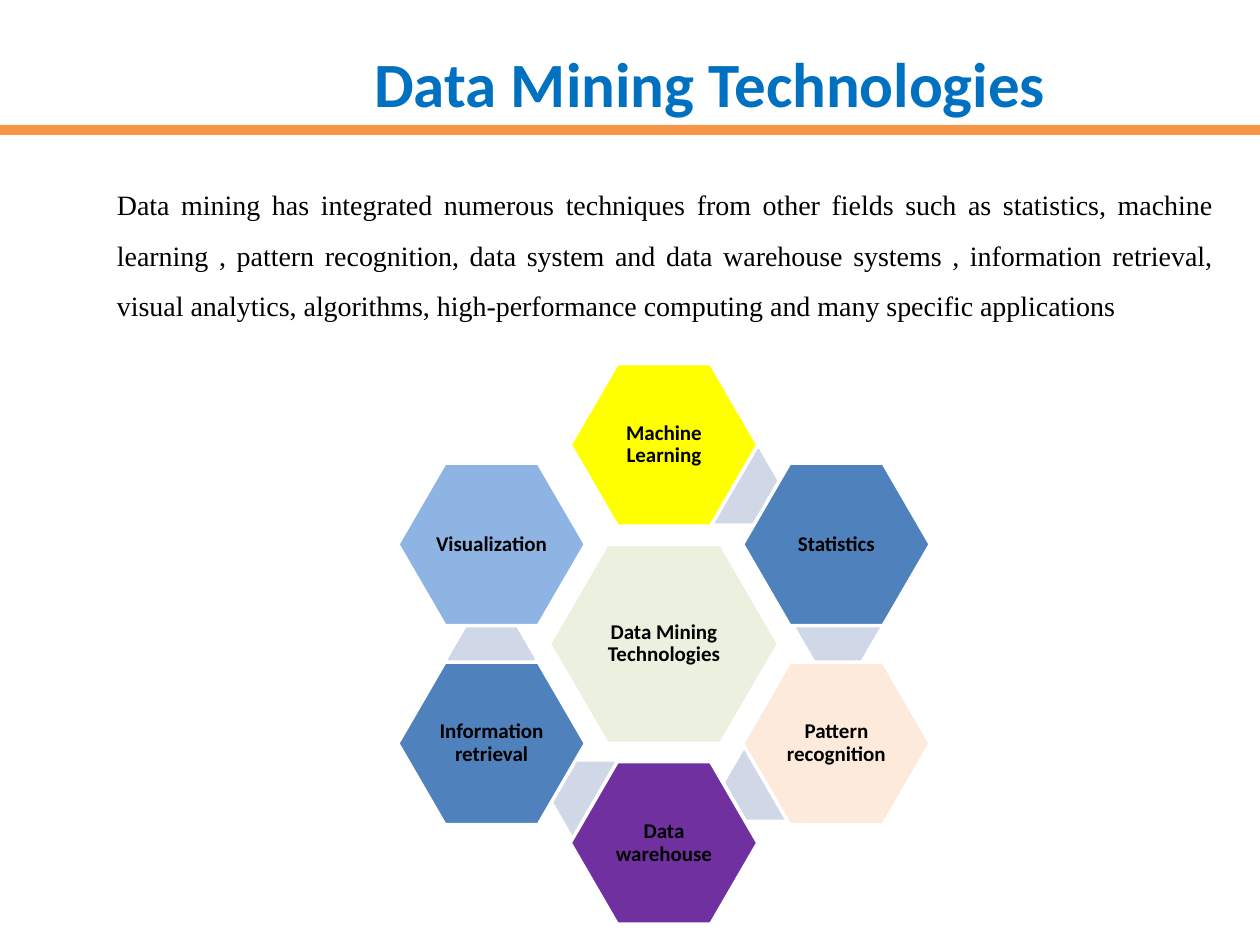
from math import cos, radians, sin

from pptx import Presentation
from pptx.dml.color import RGBColor
from pptx.enum.shapes import MSO_SHAPE as Shape
from pptx.enum.text import MSO_ANCHOR as Anchor, MSO_AUTO_SIZE as AutoSize, PP_ALIGN as Align
from pptx.util import Inches, Pt

# Content
TITLE = "Data Mining Technologies"
INTRO = (
    "Data mining has integrated numerous techniques from other fields such as statistics, "
    "machine learning , pattern recognition, data system and data warehouse systems , "
    "information retrieval, visual analytics, algorithms, high-performance computing "
    "and many specific applications"
)
HUB = ("Data Mining Technologies", "EBF1DE")
RING = [  # clockwise from the top: label, fill, centre of the link behind it
    ("Machine Learning", "FFFF00", (5.85, 3.86)),
    ("Statistics", "4F81BD", (6.65, 4.96)),
    ("Pattern recognition", "FDEADA", (6.1, 6.21)),
    ("Data warehouse", "7030A0", (4.72, 6.34)),
    ("Information retrieval", "4F81BD", (3.9, 5.23)),
    ("Visualization", "8EB4E3", None),
]

# Layout, in inches
CENTRE = (5.27, 5.11)
RADIUS = 1.58
HUB_SIZE, NODE_SIZE, LINK_SIZE = (1.82, 1.58), (1.49, 1.29), (0.69, 0.59)

# Text formats
TITLE_FONT = dict(name="Calibri", size=Pt(36), bold=True)
INTRO_FONT = dict(name="Times New Roman", size=Pt(16), bold=False)
LABEL_FONT = dict(name="Calibri", size=Pt(12), bold=True)


def colour(value):
    return RGBColor.from_string(value)


def write(frame, text, font, ink, align, spacing=1.0, **frame_format):
    settings = dict(word_wrap=True, auto_size=AutoSize.NONE) | frame_format
    for name, value in settings.items():
        setattr(frame, name, value)
    para = frame.paragraphs[0]
    para.alignment, para.line_spacing = align, spacing
    span = para.add_run()
    span.text = text
    for name, value in font.items():
        setattr(span.font, name, value)
    span.font.color.rgb = colour(ink)


def add_filled(page, kind, left, top, width, height, fill):
    shape = page.shapes.add_shape(kind, *map(Inches, (left, top, width, height)))
    shape.shadow.inherit = False
    shape.fill.solid()
    shape.fill.fore_color.rgb = colour(fill)
    shape.line.fill.background()
    return shape


def add_hexagon(page, centre, size, fill, label=None):
    (x, y), (width, height) = centre, size
    hexagon = add_filled(page, Shape.HEXAGON, x - width / 2, y - height / 2, width, height, fill)
    hexagon.adjustments[0] = 0.29
    if label:
        hexagon.line.color.rgb = colour("FFFFFF")
        hexagon.line.width = Pt(2)
        margins = {f"margin_{side}": Inches(0.02) for side in ("left", "top", "right", "bottom")}
        write(hexagon.text_frame, label, LABEL_FONT, "000000", Align.CENTER, 0.9,
              vertical_anchor=Anchor.MIDDLE, **margins)


def main():
    deck = Presentation()
    deck.slide_width, deck.slide_height = Inches(10), Inches(7.5)
    page = deck.slides.add_slide(deck.slide_layouts[5])

    # Title and rule
    title = page.shapes.title
    title.left, title.top, title.width, title.height = map(Inches, (0.83, 0.3, 9.61, 0.71))
    write(title.text_frame, TITLE, TITLE_FONT, "0070C0", Align.CENTER, vertical_anchor=Anchor.TOP)
    add_filled(page, Shape.RECTANGLE, 0, 0.99, 10, 0.08, "F79646")

    # Introduction
    box = page.shapes.add_textbox(*map(Inches, (0.83, 1.31, 8.9, 1.31)))
    write(box.text_frame, INTRO, INTRO_FONT, "000000", Align.JUSTIFY, 1.5)

    # Hub with a ring of technologies, one every 60 degrees
    add_hexagon(page, CENTRE, HUB_SIZE, HUB[1], HUB[0])
    for index, (label, fill, link) in enumerate(RING):
        if link:
            add_hexagon(page, link, LINK_SIZE, "D0D8E8")
        angle = radians(60 * index)
        node = (CENTRE[0] + RADIUS * sin(angle), CENTRE[1] - RADIUS * cos(angle))
        add_hexagon(page, node, NODE_SIZE, fill, label)

    deck.save("out.pptx")


if __name__ == "__main__":
    main()
